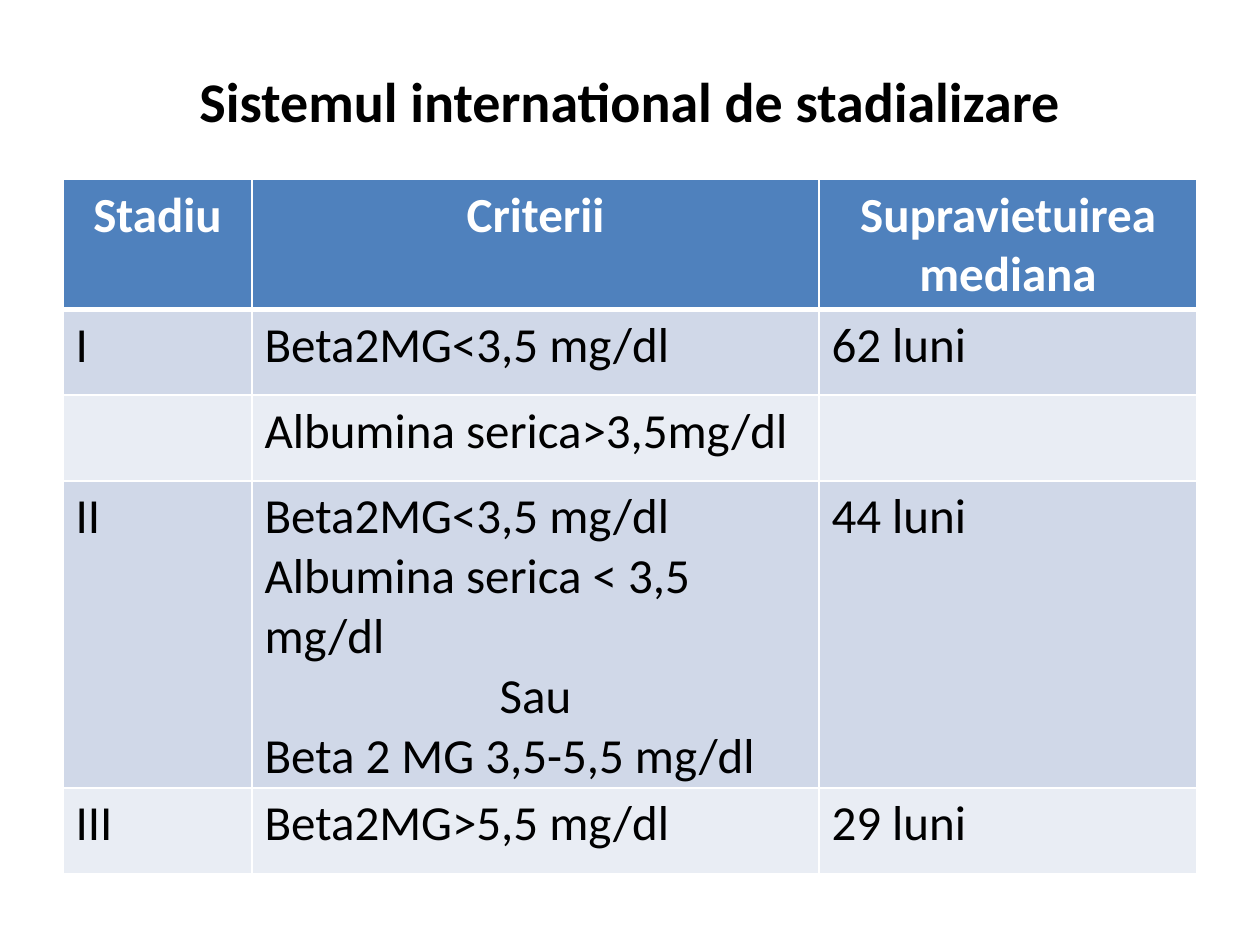
import pptx
import pptx.dml.color
import pptx.enum.text
import pptx.oxml
import pptx.oxml.ns
import pptx.util
from pptx.util import Cm

LEFT = pptx.enum.text.PP_ALIGN.LEFT
CENTER = pptx.enum.text.PP_ALIGN.CENTER


def color(value):
    return pptx.dml.color.RGBColor.from_string(value)


def write(paragraph, text, size=28, fill="000000", bold=False, align=LEFT):
    paragraph.alignment = align
    run = paragraph.add_run()
    run.text = text
    run.font.name = "Calibri"
    run.font.size = pptx.util.Pt(size)
    run.font.bold = bold
    run.font.color.rgb = color(fill)


presentation = pptx.Presentation()
presentation.slide_width = Cm(25.4)
presentation.slide_height = Cm(19.05)
slide = presentation.slides.add_slide(presentation.slide_layouts[6])

title = slide.shapes.add_textbox(Cm(1.27), Cm(0.43), Cm(22.86), Cm(3.18))
title.text_frame.word_wrap = True
title.text_frame.vertical_anchor = pptx.enum.text.MSO_ANCHOR.MIDDLE
write(title.text_frame.paragraphs[0], "Sistemul international de stadializare",
      size=32, bold=True, align=CENTER)

rows = [
    ["Stadiu", "Criterii", "Supravietuirea mediana"],
    ["I", "Beta2MG<3,5 mg/dl", "62 luni"],
    ["", "Albumina serica>3,5mg/dl", ""],
    ["II", "Beta2MG<3,5 mg/dl\nAlbumina serica < 3,5 mg/dl\nSau\nBeta 2 MG 3,5-5,5 mg/dl", "44 luni"],
    ["III", "Beta2MG>5,5 mg/dl", "29 luni"],
]
column_widths = [3.81, 11.43, 7.62]
row_heights = [2.62, 1.73, 1.73, 6.17, 1.73]
row_fills = ["4F81BD", "D0D8E8", "E9EDF4", "D0D8E8", "E9EDF4"]

table = slide.shapes.add_table(len(rows), len(column_widths), Cm(1.27), Cm(3.61),
                               Cm(sum(column_widths)), Cm(sum(row_heights))).table
for column, width in zip(table.columns, column_widths):
    column.width = Cm(width)

for row_index, texts in enumerate(rows):
    table.rows[row_index].height = Cm(row_heights[row_index])
    header = row_index == 0
    for column_index, text in enumerate(texts):
        cell = table.cell(row_index, column_index)
        properties = cell._tc.get_or_add_tcPr()
        for side in "LRTB":
            thick = (row_index, side) in [(0, "B"), (1, "T")]
            properties.append(pptx.oxml.parse_xml(
                f'<a:ln{side} {pptx.oxml.ns.nsdecls("a")} w="{38100 if thick else 12700}">'
                f'<a:solidFill><a:srgbClr val="FFFFFF"/></a:solidFill></a:ln{side}>'))
        cell.fill.solid()
        cell.fill.fore_color.rgb = color(row_fills[row_index])
        for line_index, line in enumerate(text.split("\n") if text else []):
            frame = cell.text_frame
            paragraph = frame.add_paragraph() if line_index else frame.paragraphs[0]
            write(paragraph, line, fill="FFFFFF" if header else "000000", bold=header,
                  align=CENTER if header or line == "Sau" else LEFT)

presentation.save("out.pptx")
